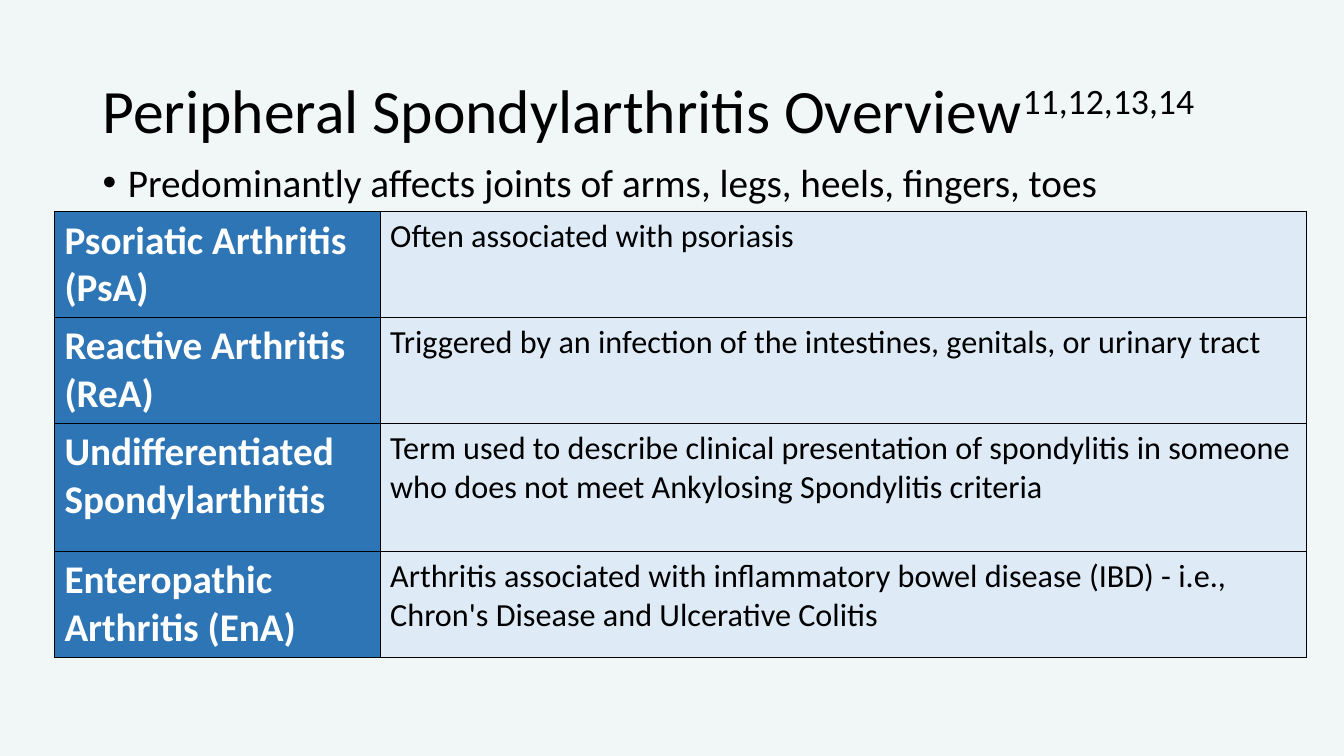
from lxml.etree import SubElement
from pptx import Presentation
from pptx.dml.color import RGBColor
from pptx.enum.text import MSO_ANCHOR
from pptx.oxml.ns import qn
from pptx.util import Inches, Pt

FONT = "Calibri"
COLORS = {
    "background": "F0F7F6",
    "text": "000000",
    "border": "000000",
    "name_text": "FFFFFF",
    "name_fill": "2E75B6",
    "detail_fill": "DEEBF7",
}
COLUMN_WIDTHS = (3.23, 9.19)
# Condition, description, row height in inches
CONDITIONS = [
    ("Psoriatic Arthritis (PsA)", "Often associated with psoriasis", 1.05),
    ("Reactive Arthritis (ReA)",
     "Triggered by an infection of the intestines, genitals, or urinary tract", 1.05),
    ("Undifferentiated Spondylarthritis",
     "Term used to describe clinical presentation of spondylitis in someone "
     "who does not meet Ankylosing Spondylitis criteria", 1.27),
    ("Enteropathic Arthritis (EnA)",
     "Arthritis associated with inflammatory bowel disease (IBD) - i.e., "
     "Chron's Disease and Ulcerative Colitis", 1.05),
]


def rgb(name):
    return RGBColor.from_string(COLORS[name])


def format_run(r, size, color="text", bold=False):
    r.font.name = FONT
    r.font.size = Pt(size)
    r.font.bold = bold
    r.font.color.rgb = rgb(color)


def add_text(slide, left, top, width, height, text, size, anchor):
    box = slide.shapes.add_textbox(Inches(left), Inches(top), Inches(width), Inches(height))
    tf = box.text_frame
    tf.word_wrap = True
    tf.vertical_anchor = anchor
    p = tf.paragraphs[0]
    p.text = text
    p.line_spacing = 0.9
    format_run(p.runs[0], size)
    return p


def add_superscript(p, text, size):
    r = p.add_run()
    r.text = text
    format_run(r, size)
    r.font._element.set("baseline", "30000")


def add_bullet(p):
    p.space_before = Pt(10)
    pPr = p._p.get_or_add_pPr()
    pPr.set("marL", str(Inches(0.25)))
    pPr.set("indent", str(Inches(-0.25)))
    SubElement(pPr, qn("a:buFont"), typeface="Arial")
    SubElement(pPr, qn("a:buChar"), char="•")


def add_borders(cell):
    tcPr = cell._tc.get_or_add_tcPr()
    for i, side in enumerate(("lnL", "lnR", "lnT", "lnB")):
        ln = tcPr.makeelement(qn(f"a:{side}"), {"w": str(Pt(1))})
        tcPr.insert(i, ln)
        fill = SubElement(ln, qn("a:solidFill"))
        SubElement(fill, qn("a:srgbClr"), val=COLORS["border"])


def fill_cell(cell, text, size, color, fill, bold):
    cell.fill.solid()
    cell.fill.fore_color.rgb = rgb(fill)
    add_borders(cell)
    cell.text_frame.text = text
    format_run(cell.text_frame.paragraphs[0].runs[0], size, color, bold)


def add_condition_table(slide, left, top):
    width = sum(COLUMN_WIDTHS)
    height = sum(row[2] for row in CONDITIONS)
    table = slide.shapes.add_table(
        len(CONDITIONS), len(COLUMN_WIDTHS),
        Inches(left), Inches(top), Inches(width), Inches(height)).table
    table.first_row = False
    table.first_col = True
    table.horz_banding = False
    for column, column_width in zip(table.columns, COLUMN_WIDTHS):
        column.width = Inches(column_width)
    for i, (name, detail, row_height) in enumerate(CONDITIONS):
        table.rows[i].height = Inches(row_height)
        fill_cell(table.cell(i, 0), name, 28, "name_text", "name_fill", True)
        fill_cell(table.cell(i, 1), detail, 23, "text", "detail_fill", False)


def main():
    prs = Presentation()
    prs.slide_width = Inches(13.33)
    prs.slide_height = Inches(7.5)
    slide = prs.slides.add_slide(prs.slide_layouts[6])
    slide.background.fill.solid()
    slide.background.fill.fore_color.rgb = rgb("background")

    # Title with reference numbers
    title = add_text(slide, 0.92, 0.4, 11.5, 1.45,
                     "Peripheral Spondylarthritis Overview", 44, MSO_ANCHOR.MIDDLE)
    add_superscript(title, "11,12,13,14", 44)

    # Key point
    point = add_text(slide, 0.92, 1.57, 11.5, 4.76,
                     "Predominantly affects joints of arms, legs, heels, fingers, toes",
                     28, MSO_ANCHOR.TOP)
    add_bullet(point)

    # Conditions
    add_condition_table(slide, 0.54, 2.1)

    prs.save("out.pptx")


if __name__ == "__main__":
    main()
